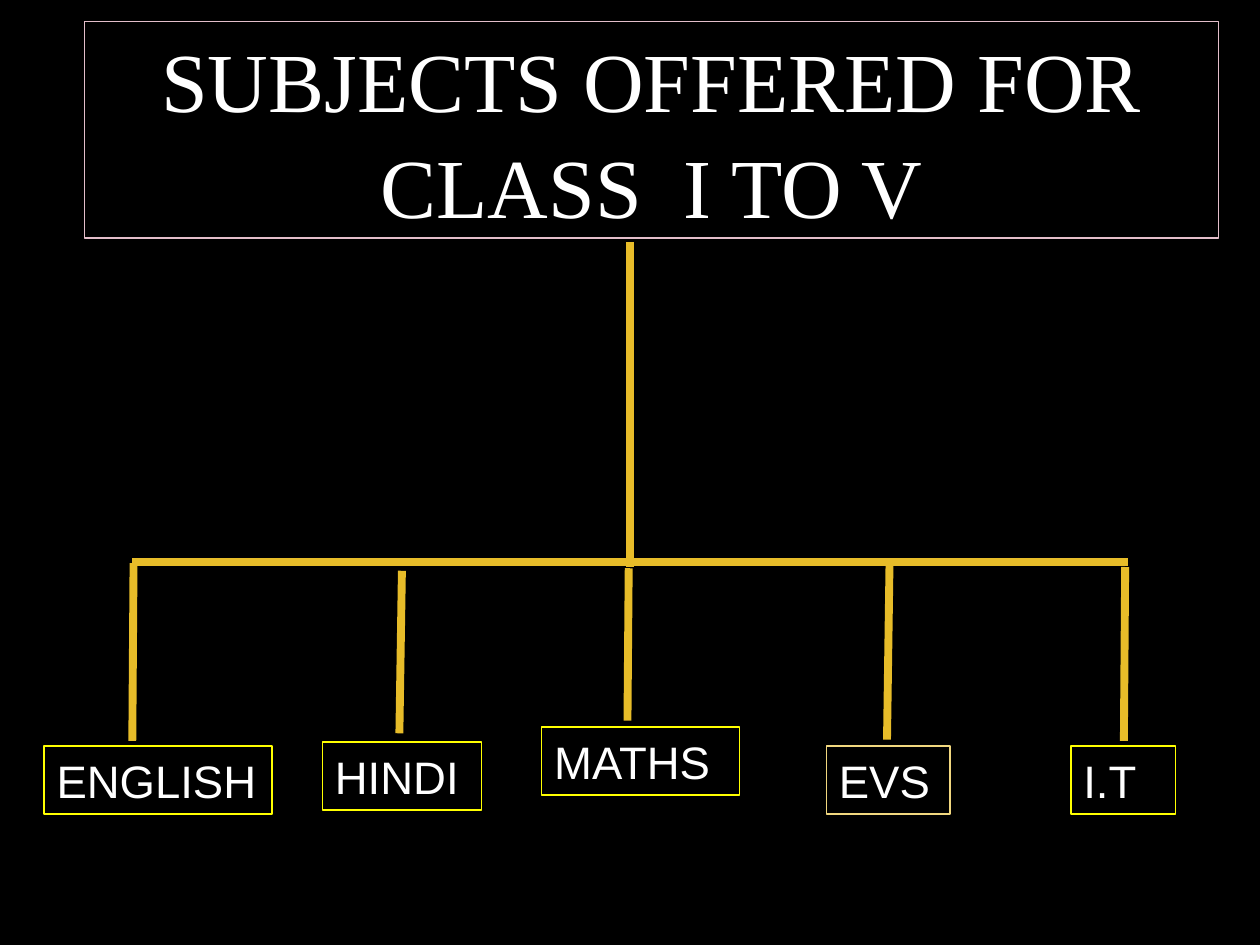
import pptx
import pptx.dml.color
import pptx.enum.shapes
import pptx.enum.text
import pptx.oxml.ns
import pptx.util
from lxml import etree

Inches = pptx.util.Inches
Pt = pptx.util.Pt
RGBColor = pptx.dml.color.RGBColor

BLACK = RGBColor(0x00, 0x00, 0x00)
WHITE = RGBColor(0xFF, 0xFF, 0xFF)
PINK = RGBColor(0xE3, 0xBE, 0xCA)
YELLOW = RGBColor(0xFF, 0xFF, 0x00)
PALE_GOLD = RGBColor(0xF1, 0xD7, 0x7F)
GOLD = RGBColor(0xE7, 0xBC, 0x29)


def fill_box(box, text, font_name, size, border, align):
    """Write white text into a thinly outlined box."""
    box.line.color.rgb = border
    box.line.width = Pt(0.75)
    frame = box.text_frame
    frame.text = text
    frame.word_wrap = True
    frame.auto_size = pptx.enum.text.MSO_AUTO_SIZE.NONE
    frame.vertical_anchor = pptx.enum.text.MSO_ANCHOR.MIDDLE
    paragraph = frame.paragraphs[0]
    paragraph.alignment = align
    font = paragraph.runs[0].font
    font.name = font_name
    font.size = Pt(size)
    font.color.rgb = WHITE


def add_branch(x1, y1, x2, y2):
    branch = slide.shapes.add_connector(
        pptx.enum.shapes.MSO_CONNECTOR.STRAIGHT,
        Inches(x1), Inches(y1), Inches(x2), Inches(y2))
    branch.line.color.rgb = GOLD
    branch.line.width = Pt(4.5)
    properties = branch._element.spPr
    etree.SubElement(properties, pptx.oxml.ns.qn("a:effectLst"))


presentation = pptx.Presentation()
presentation.slide_width = Inches(10)
presentation.slide_height = Inches(7.5)
slide = presentation.slides.add_slide(presentation.slide_layouts[5])
slide.background.fill.solid()
slide.background.fill.fore_color.rgb = BLACK

heading = slide.shapes.title
heading.left, heading.top = Inches(0.67), Inches(0.17)
heading.width, heading.height = Inches(9), Inches(1.72)
fill_box(heading, "SUBJECTS OFFERED FOR CLASS  I TO V", "Times New Roman",
         48, PINK, pptx.enum.text.PP_ALIGN.CENTER)
heading.text_frame.paragraphs[0].line_spacing = 1.05

# Trunk and crossbar
add_branch(5, 1.92, 5, 4.5)
add_branch(1.05, 4.46, 8.95, 4.46)

# Subject, box left, top, width, border, branch start and end
subjects = [
    ("ENGLISH", 0.35, 5.92, 1.81, YELLOW, (1.06, 4.47, 1.05, 5.88)),
    ("HINDI", 2.56, 5.89, 1.26, YELLOW, (3.19, 4.53, 3.17, 5.82)),
    ("MATHS", 4.3, 5.77, 1.57, YELLOW, (4.99, 4.51, 4.98, 5.72)),
    ("EVS", 6.56, 5.92, 0.98, PALE_GOLD, (7.06, 4.46, 7.04, 5.87)),
    ("I.T", 8.5, 5.92, 0.83, YELLOW, (8.93, 4.5, 8.92, 5.88)),
]
for subject, left, top, width, border, branch_ends in subjects:
    add_branch(*branch_ends)
    label = slide.shapes.add_textbox(
        Inches(left), Inches(top), Inches(width), Inches(0.54))
    fill_box(label, subject, "Arial", 26, border,
             pptx.enum.text.PP_ALIGN.LEFT)

presentation.save("out.pptx")
